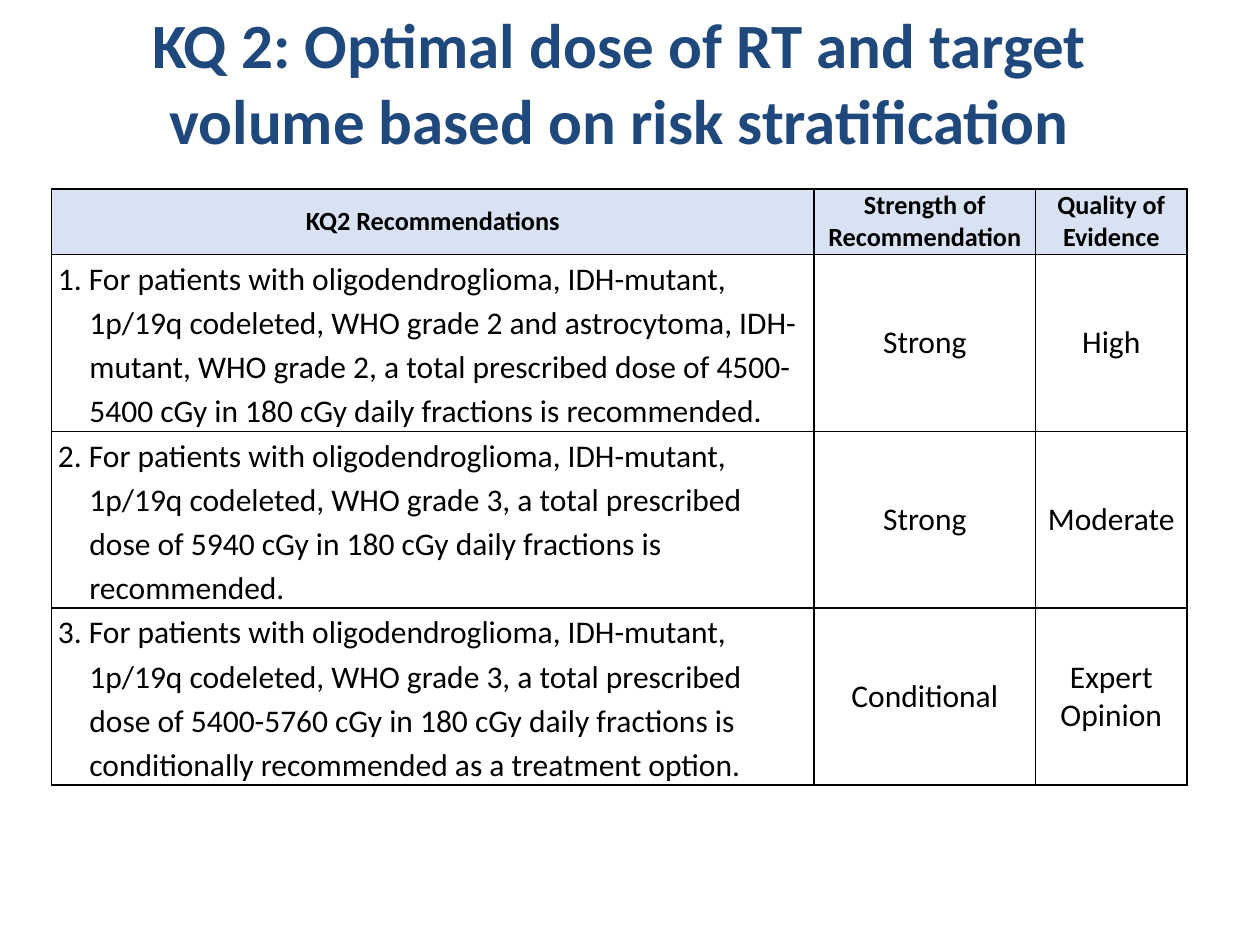
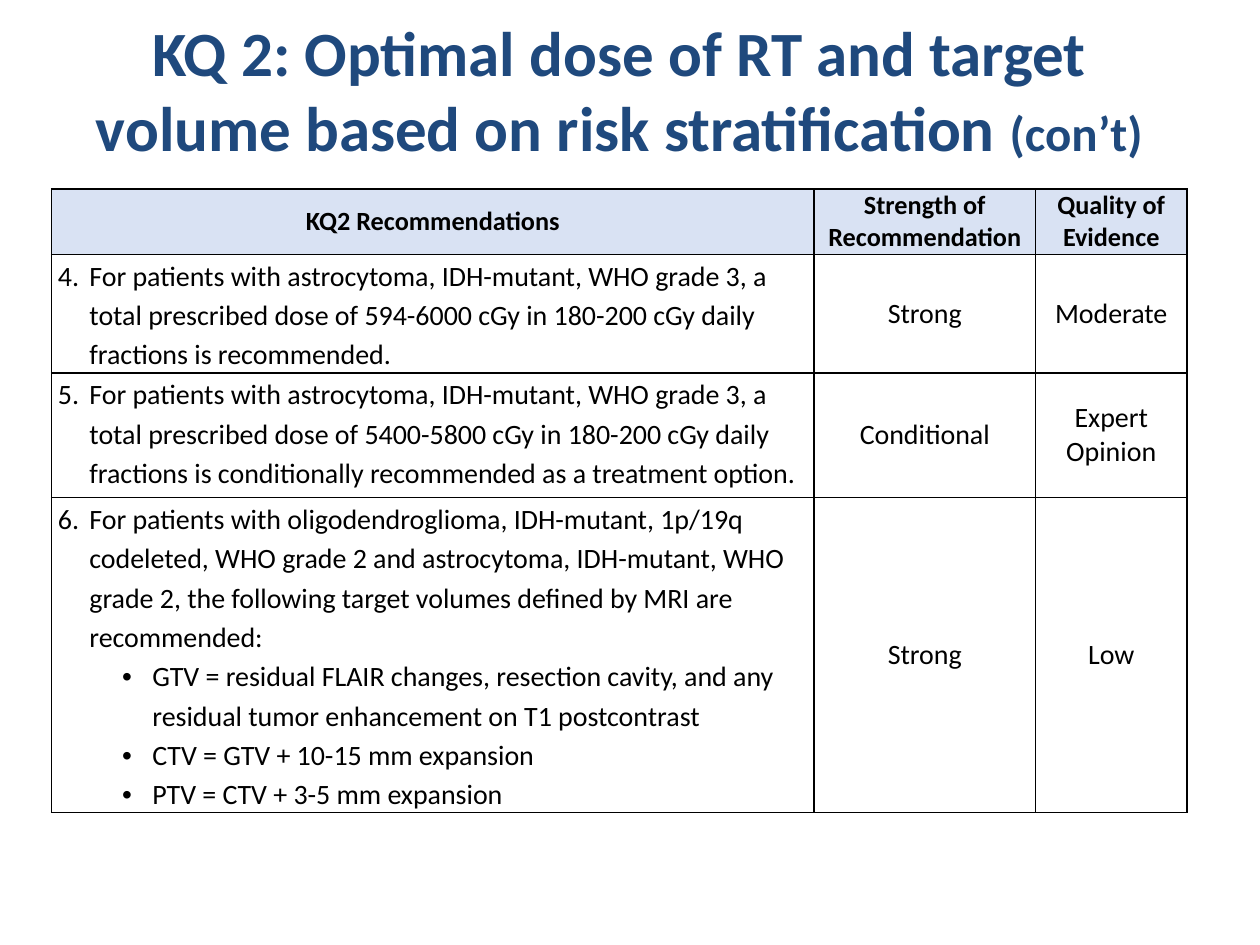
"""Build two slides of graded dose and target volume recommendations."""
from lxml import etree
from pptx import Presentation, util as u
from pptx.dml.color import RGBColor
from pptx.enum import text
from pptx.oxml.ns import qn

COLORS = {"title": "1F497D", "header": "D9E2F3", "body": "FFFFFF", "ink": "000000"}
FONT = "Calibri"
TITLE = "KQ 2: Optimal dose of RT and target volume based on risk stratification"
HEADERS = ["KQ2 Recommendations", "Strength of\nRecommendation", "Quality of\nEvidence"]
COLUMN_WIDTHS = [6.05, 1.76, 1.2]
HEADER_HEIGHT = 0.52
BULLET = "•"

FIRST_ROWS = [
    ("1. For patients with oligodendroglioma, IDH-mutant, 1p/19q codeleted, WHO grade 2 "
     "and astrocytoma, IDH-mutant, WHO grade 2, a total prescribed dose of 4500-5400 cGy "
     "in 180 cGy daily fractions is recommended.", "Strong", "High"),
    ("2. For patients with oligodendroglioma, IDH-mutant, 1p/19q codeleted, WHO grade 3, "
     "a total prescribed dose of 5940 cGy in 180 cGy daily fractions is recommended.",
     "Strong", "Moderate"),
    ("3. For patients with oligodendroglioma, IDH-mutant, 1p/19q codeleted, WHO grade 3, "
     "a total prescribed dose of 5400-5760 cGy in 180 cGy daily fractions is "
     "conditionally recommended as a treatment option.", "Conditional", "Expert Opinion"),
]
SECOND_ROWS = [
    ("4.\tFor patients with astrocytoma, IDH-mutant, WHO grade 3, a total prescribed dose "
     "of 594-6000 cGy in 180-200 cGy daily fractions is recommended.",
     "Strong", "Moderate"),
    ("5.\tFor patients with astrocytoma, IDH-mutant, WHO grade 3, a total prescribed dose "
     "of 5400-5800 cGy in 180-200 cGy daily fractions is conditionally recommended as a "
     "treatment option.", "Conditional", "Expert Opinion"),
    ("6.\tFor patients with oligodendroglioma, IDH-mutant, 1p/19q codeleted, WHO grade 2 "
     "and astrocytoma, IDH-mutant, WHO grade 2, the following target volumes defined by "
     "MRI are recommended:\n"
     "•GTV = residual FLAIR changes, resection cavity, and any residual tumor "
     "enhancement on T1 postcontrast\n"
     "•CTV = GTV + 10-15 mm expansion\n"
     "•PTV = CTV + 3-5 mm expansion", "Strong", "Low"),
]


def add_run(paragraph, words, size, color="ink", bold=False):
    """Add a formatted run to a paragraph."""
    run = paragraph.add_run()
    run.text = words
    run.font.name = FONT
    run.font.size = u.Pt(size)
    run.font.bold = bold
    run.font.color.rgb = RGBColor.from_string(COLORS[color])


def indent(paragraph, left, hanging, bullet=None):
    """Give a paragraph a hanging indent and an optional bullet."""
    properties = paragraph._p.get_or_add_pPr()
    properties.set("marL", str(u.Inches(left)))
    properties.set("indent", str(-u.Inches(hanging)))
    paragraph.line_spacing = 1.15
    if bullet:
        etree.SubElement(properties, qn("a:buFont"), typeface="Arial")
        etree.SubElement(properties, qn("a:buChar"), char=bullet)
    else:
        etree.SubElement(properties, qn("a:buNone"))


def write_text(frame, content, size, listed=False, **run_format):
    """Write one paragraph per line, centred or as a hanging list."""
    for index, line in enumerate(content.split("\n")):
        paragraph = frame.add_paragraph() if index else frame.paragraphs[0]
        if not listed:
            paragraph.alignment = text.PP_ALIGN.CENTER
        elif line.startswith(BULLET):
            indent(paragraph, 0.75, 0.24, BULLET)
        else:
            indent(paragraph, 0.25, 0.25)
        add_run(paragraph, line.removeprefix(BULLET), size, **run_format)


def add_borders(cell):
    """Draw a thin line on each side of a cell."""
    properties = cell._tc.get_or_add_tcPr()
    for side in ("lnL", "lnR", "lnT", "lnB"):
        line = etree.SubElement(properties, qn(f"a:{side}"), w=str(u.Pt(1)))
        fill = etree.SubElement(line, qn("a:solidFill"))
        etree.SubElement(fill, qn("a:srgbClr"), val=COLORS["ink"])


def fill_cell(cell, content, size, fill="body", margin=0.05, listed=False, bold=False):
    """Format a table cell and write its text."""
    add_borders(cell)
    cell.fill.solid()
    cell.fill.fore_color.rgb = RGBColor.from_string(COLORS[fill])
    cell.margin_left = cell.margin_right = u.Inches(margin)
    cell.margin_top = cell.margin_bottom = 0
    cell.vertical_anchor = text.MSO_ANCHOR.TOP if listed else text.MSO_ANCHOR.MIDDLE
    write_text(cell.text_frame, content, size, listed, bold=bold)


def add_title(slide, top, suffix=""):
    """Place the shared title and an optional smaller suffix."""
    title = slide.shapes.title
    title.left, title.top = u.Inches(0.33), u.Inches(top)
    title.width, title.height = u.Inches(9.17), u.Inches(1.25)
    frame = title.text_frame
    frame.word_wrap = True
    frame.auto_size = text.MSO_AUTO_SIZE.NONE
    frame.vertical_anchor = text.MSO_ANCHOR.MIDDLE
    write_text(frame, TITLE + (" " if suffix else ""), 36, color="title", bold=True)
    if suffix:
        add_run(frame.paragraphs[0], suffix, 28, color="title", bold=True)


def add_recommendations(slide, rows, row_heights, size):
    """Add the table of recommendations, strength and evidence."""
    heights = [HEADER_HEIGHT, *row_heights]
    table = slide.shapes.add_table(
        len(heights), len(HEADERS), u.Inches(0.41), u.Inches(1.5),
        u.Inches(sum(COLUMN_WIDTHS)), u.Inches(sum(heights))).table
    table.first_row = table.horz_banding = False
    for column, width in zip(table.columns, COLUMN_WIDTHS):
        column.width = u.Inches(width)
    for row, height in zip(table.rows, heights):
        row.height = u.Inches(height)
    for column, header in enumerate(HEADERS):
        fill_cell(table.cell(0, column), header, 15, fill="header", margin=0.07, bold=True)
    for row, contents in enumerate(rows, start=1):
        for column, content in enumerate(contents):
            fill_cell(table.cell(row, column), content, size, listed=column == 0)


def main():
    """Build and save the presentation."""
    presentation = Presentation()
    presentation.slide_width, presentation.slide_height = u.Inches(10), u.Inches(7.5)
    layout = presentation.slide_layouts[5]

    slide = presentation.slides.add_slide(layout)
    add_title(slide, 0.02)
    add_recommendations(slide, FIRST_ROWS, [1.4] * 3, 18)

    slide = presentation.slides.add_slide(layout)
    add_title(slide, 0.08, "(con’t)")
    add_recommendations(slide, SECOND_ROWS, [0.94, 0.99, 2.5], 16)

    presentation.save("out.pptx")


if __name__ == "__main__":
    main()
